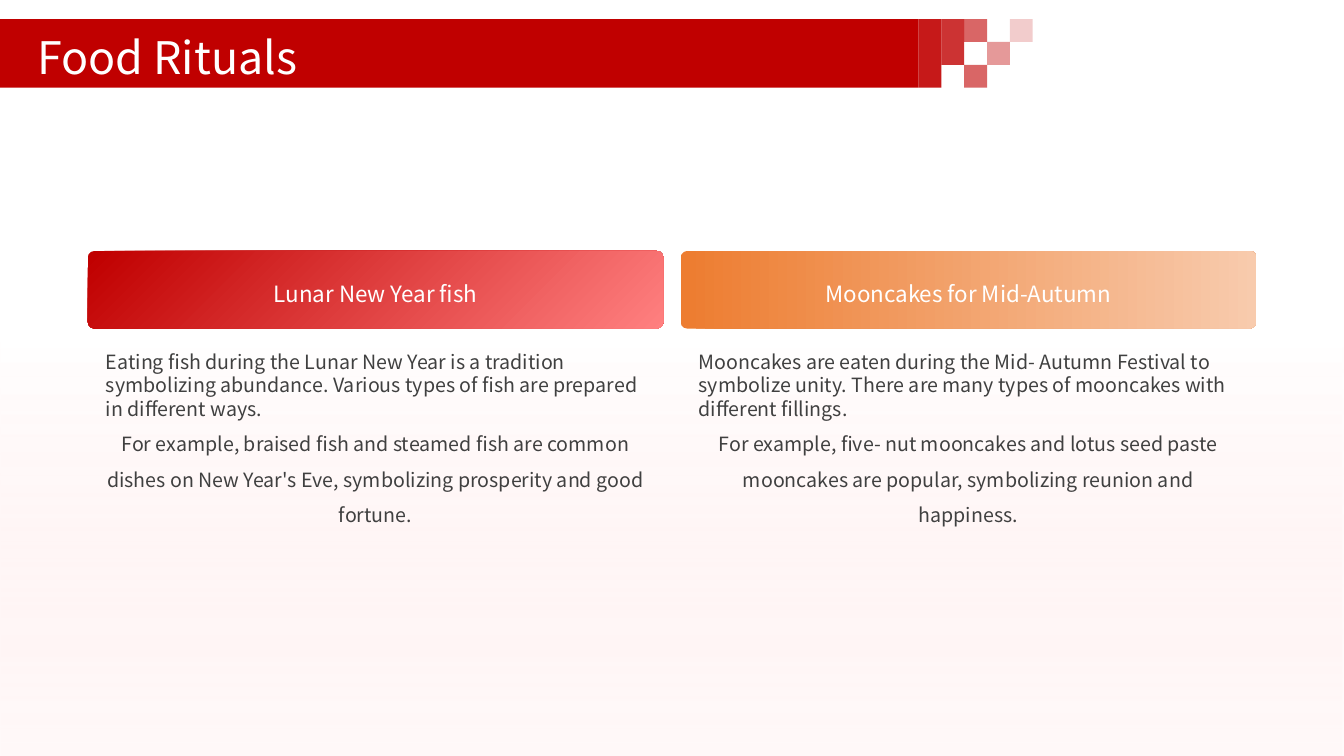
from lxml import etree
from pptx import Presentation
from pptx import util as u
from pptx.dml.color import RGBColor
from pptx.enum import shapes, text
from pptx.oxml import ns

WIDTH, HEIGHT = 13.33, 7.5
FONT = "Noto Sans CJK SC"
RED = RGBColor(0xC0, 0x00, 0x00)
PINK = RGBColor(0xFF, 0x80, 0x80)
BLUSH = RGBColor(0xFF, 0xBF, 0xBF)
ORANGE = RGBColor(0xED, 0x7D, 0x31)
PEACH = RGBColor(0xF8, 0xCB, 0xAD)
WHITE = RGBColor(0xFF, 0xFF, 0xFF)
GREY = RGBColor(0x40, 0x40, 0x40)

CENTER, LEFT = text.PP_ALIGN.CENTER, text.PP_ALIGN.LEFT
MIDDLE, TOP = text.MSO_ANCHOR.MIDDLE, text.MSO_ANCHOR.TOP

CARDS = [
    ("Lunar New Year fish", (RED, PINK), 315,
     "Eating fish during the Lunar New Year is a tradition symbolizing abundance. "
     "Various types of fish are prepared in different ways.",
     "For example, braised fish and steamed fish are common dishes on New Year's Eve, "
     "symbolizing prosperity and good fortune."),
    ("Mooncakes for Mid-Autumn", (ORANGE, PEACH), 0,
     "Mooncakes are eaten during the Mid- Autumn Festival to symbolize unity. "
     "There are many types of mooncakes with different fillings.",
     "For example, five- nut mooncakes and lotus seed paste mooncakes are popular, "
     "symbolizing reunion and happiness."),
]

# Mosaic squares: column, row, rows tall, opacity in percent
MOSAIC = [(0, 0, 3, 90), (1, 0, 2, 80), (2, 0, 1, 60), (2, 2, 1, 60),
          (3, 1, 1, 40), (4, 0, 1, 20)]


def inches(*lengths):
    return [u.Inches(length) for length in lengths]


def set_opacity(shape, percents):
    """Give each colour of the shape's fill its opacity, in order."""
    colors = shape.element.spPr.iter(ns.qn("a:srgbClr"))
    for color, percent in zip(list(colors), percents):
        etree.SubElement(color, ns.qn("a:alpha")).set("val", str(percent * 1000))


def add_block(page, box, color=None, kind=shapes.MSO_SHAPE.RECTANGLE):
    block = page.shapes.add_shape(kind, *inches(*box))
    block.shadow.inherit = False
    block.line.fill.background()
    if color is not None:
        block.fill.solid()
        block.fill.fore_color.rgb = color
    return block


def set_gradient(shape, colors, positions, angle):
    shape.fill.gradient()
    shape.fill.gradient_angle = angle
    for stop, color, position in zip(shape.fill.gradient_stops, colors, positions):
        stop.color.rgb = color
        stop.position = position


def add_text(page, box, paragraphs, size, color, anchor=TOP):
    """Paragraphs are (wording, alignment, line spacing)."""
    frame = page.shapes.add_textbox(*inches(*box)).text_frame
    frame.word_wrap = True
    frame.vertical_anchor = anchor
    frame.margin_left = frame.margin_right = frame.margin_top = frame.margin_bottom = 0
    for index, (wording, alignment, spacing) in enumerate(paragraphs):
        para = frame.add_paragraph() if index else frame.paragraphs[0]
        para.text = wording
        para.alignment = alignment
        para.line_spacing = spacing
        para.font.name = FONT
        para.font.size = u.Pt(size)
        para.font.color.rgb = color


def add_backdrop(page):
    backdrop = add_block(page, (0, 0, WIDTH, HEIGHT))
    set_gradient(backdrop, (BLUSH, WHITE), (0, 0.55), 90)
    set_opacity(backdrop, (8, 46))


def add_title_band(page, box, title):
    left, top, width, height = box
    add_block(page, box, RED)
    # Mosaic at the band's right end
    cell = height / 3
    for column, row, rows, opacity in MOSAIC:
        square = add_block(page, (left + width + column * cell, top + row * cell,
                                  cell, rows * cell), RED)
        set_opacity(square, [opacity])
    add_text(page, (left + 0.37, top + 0.08, width - 0.37, 0.47),
             [(title, LEFT, 1.2)], 32, WHITE, MIDDLE)


def add_card(page, box, card):
    heading, colors, angle, tradition, example = card
    left, top, width, height = box
    header, inset = 0.77, 0.18
    # Gradient header
    bar = add_block(page, (left, top, width, header),
                    kind=shapes.MSO_SHAPE.ROUNDED_RECTANGLE)
    bar.adjustments[0] = 0.086
    set_gradient(bar, colors, (0.01, 1), angle)
    inner = width - 2 * inset
    add_text(page, (left + inset, top + 0.04, inner, header - 0.08),
             [(heading, CENTER, 1.3)], 16, WHITE, MIDDLE)
    # Body
    body = header + 0.21
    add_text(page, (left + inset, top + body, inner, height - body),
             [(tradition, LEFT, 1.0), (example, CENTER, 1.5)], 14, GREY)


def main():
    deck = Presentation()
    deck.slide_width, deck.slide_height = inches(WIDTH, HEIGHT)
    page = deck.slides.add_slide(deck.slide_layouts[6])
    add_backdrop(page)
    card_width, gap = 5.71, 0.17
    for index, card in enumerate(CARDS):
        left = 0.87 + index * (card_width + gap)
        add_card(page, (left, 2.49, card_width, 2.96), card)
    add_title_band(page, (0, 0.19, 9.11, 0.68), "Food Rituals")
    deck.save("out.pptx")


if __name__ == "__main__":
    main()
